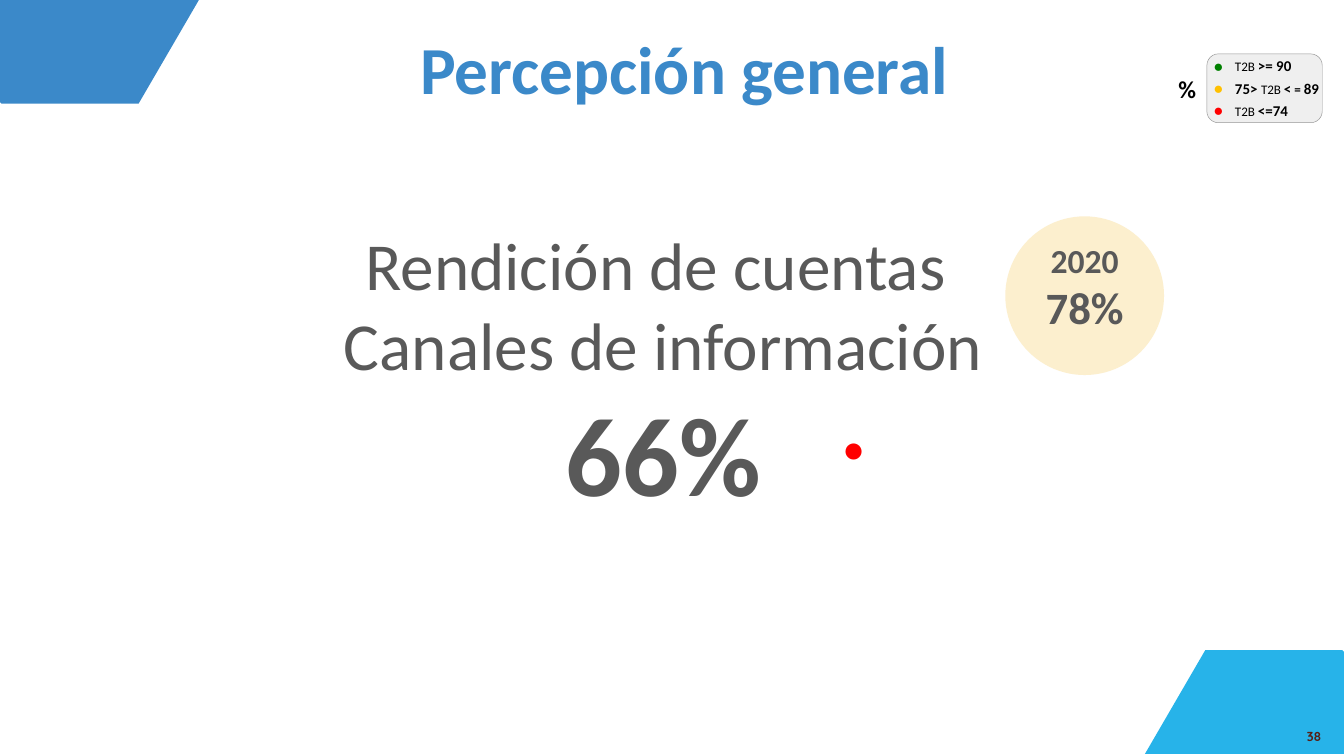
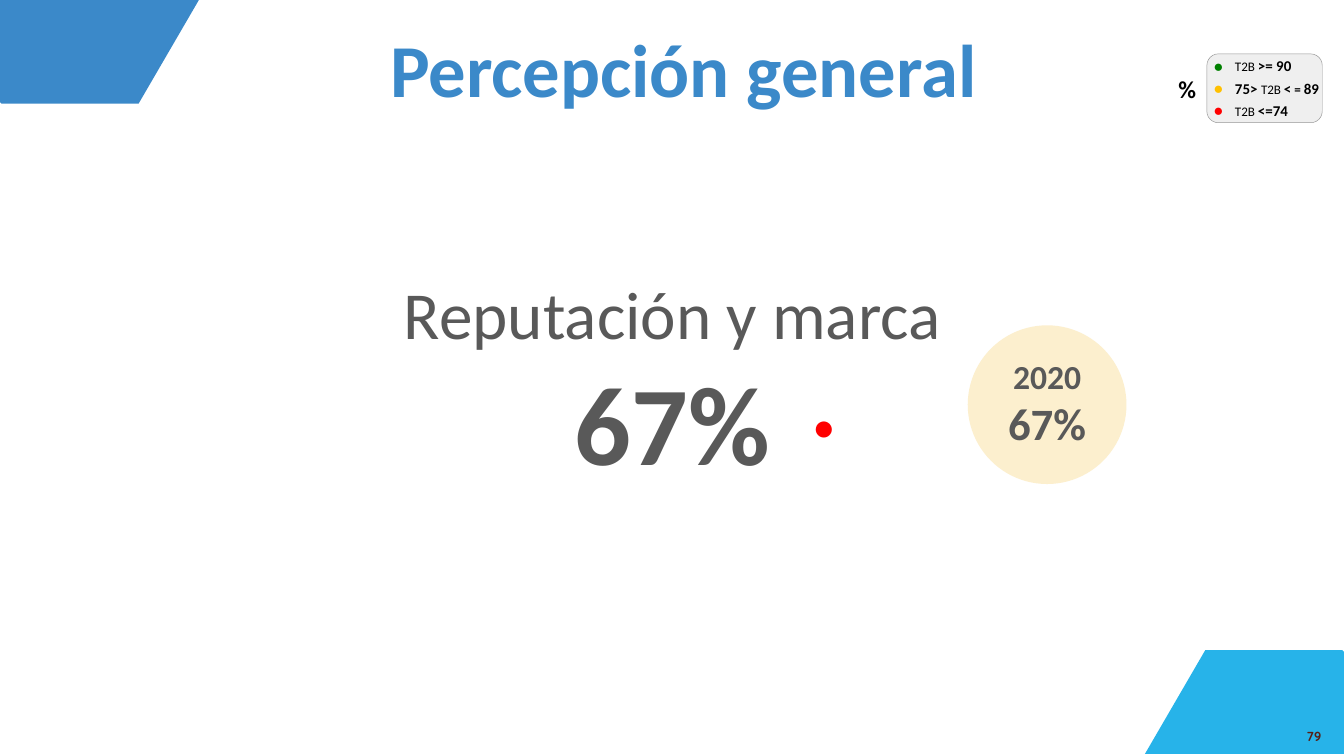
from pptx import Presentation
from pptx.dml.color import RGBColor
from pptx.enum.shapes import MSO_SHAPE
from pptx.enum.text import MSO_ANCHOR, PP_ALIGN
from pptx.util import Cm, Pt
from lxml import etree

BLUE = RGBColor(0x3B, 0x89, 0xC9)
SKY = RGBColor(0x27, 0xB3, 0xE9)
BROWN = RGBColor(0x55, 0x1F, 0x15)
GREY = RGBColor(0x59, 0x59, 0x59)
CREAM = RGBColor(0xFC, 0xEF, 0xCE)
PALE = RGBColor(0xEA, 0xEA, 0xEA)
EDGE = RGBColor(0x96, 0x96, 0x96)
BLACK = RGBColor(0, 0, 0)
GREEN = RGBColor(0, 0x80, 0)
AMBER = RGBColor(0xFF, 0xC0, 0)
RED = RGBColor(0xFF, 0, 0)

WIDE, HIGH, BASE = 25.4, 14.29, 14.25
CORNER = [(2.62, 1.96), (3.76, 0), (0, 0), (0, 1.93), (0.03, 1.96)]
TITLE = "Percepción general "
DOT = "●"
PLAIN = "{2D5ABB26-0587-4C30-8999-92F81FD0307C}"

# Each legend row: dot colour, then runs of (text, size, bold)
LEGEND = [
    (GREEN, [("T2B ", 7, False), (">= 90", 8, True)]),
    (AMBER, [("75> ", 8, True), ("T2B ", 7, False), ("<", 8, True),
             (" = ", 7, True), ("89", 8, True)]),
    (RED, [("T2B ", 7, False), ("<=74", 8, True)]),
]

SLIDES = [
    {"page": "38", "size": 36,
     "topic": ["Rendición de cuentas ", "Canales de información"],
     "score": "66%", "body": (6.25, 4.09, 12.57, 5.89), "dot": (15.67, 7.92),
     "past": "78%", "badge": (19, 4.09), "inset": 0},
    {"page": "79", "size": 40, "topic": ["Reputación y marca"],
     "score": "67%", "body": (6.22, 5.03, 12.98, 4.37), "dot": (15.11, 7.49),
     "past": "67%", "badge": (18.29, 6.15), "inset": 0.13},
]


def cms(*nums):
    return [Cm(n) for n in nums]


def write(frame, lines, align=None, space=None):
    """Fill a frame with lines; each line is a list of (text, size, bold, colour, font)."""
    for i, line in enumerate(lines):
        par = frame.add_paragraph() if i else frame.paragraphs[0]
        par.alignment = align
        par.line_spacing = space
        for text, size, bold, color, face in line:
            run = par.add_run()
            run.text = text
            run.font.size, run.font.bold = Pt(size), bold
            run.font.color.rgb, run.font.name = color, face


def label(slide, box, lines, align=None, anchor=MSO_ANCHOR.TOP):
    frame = slide.shapes.add_textbox(*cms(*box)).text_frame
    frame.word_wrap = True
    frame.vertical_anchor = anchor
    write(frame, lines, align)


def wedge(slide, points, color):
    first, *rest = [cms(*p) for p in points]
    pen = slide.shapes.build_freeform(*first)
    pen.add_line_segments(rest, close=True)
    shape = pen.convert_to_shape()
    shape.shadow.inherit = False
    shape.fill.solid()
    shape.fill.fore_color.rgb = color
    shape.line.fill.background()


def grid(slide, left, top, cols, rows):
    """Add a table with no style and return it."""
    table = slide.shapes.add_table(
        len(rows), len(cols), *cms(left, top, sum(cols), sum(rows))).table
    table.first_row = table.horz_banding = False
    table._tbl.tblPr[0].text = PLAIN
    for col, size in zip(table.columns, cols):
        col.width = Cm(size)
    for row, size in zip(table.rows, rows):
        row.height = Cm(size)
    return table


def fill(cell, line, side, end, align=None, space=None):
    cell.fill.background()
    cell.vertical_anchor = MSO_ANCHOR.MIDDLE
    cell.margin_left = cell.margin_right = Cm(side)
    cell.margin_top = cell.margin_bottom = Cm(end)
    write(cell.text_frame, [line], align, space)


def legend(slide):
    card = slide.shapes.add_shape(
        MSO_SHAPE.ROUNDED_RECTANGLE, *cms(22.81, 1.02, 2.18, 1.3))
    card.shadow.inherit = False
    card.fill.solid()
    card.fill.fore_color.rgb = PALE
    tint = card.fill._xPr.solidFill[0]
    etree.SubElement(tint, tint.tag.replace("srgbClr", "alpha"), val="73000")
    card.line.color.rgb = EDGE
    card.line.width = Pt(0.25)

    table = grid(slide, 22.81, 1.02, [0.43, 1.83], [0.48, 0.41, 0.41])
    for i, (color, runs) in enumerate(LEGEND):
        fill(table.cell(i, 0), [(DOT, 9, True, color, "Arial")], 0.1, 0.05,
             PP_ALIGN.CENTER, 0.8 if i else None)
        fill(table.cell(i, 1), [(*run, BLACK, "Calibri") for run in runs],
             0.1, 0.05, space=0.8)
    unit = grid(slide, 22.02, 1.42, [0.84], [0.56])
    fill(unit.cell(0, 0), [("%", 13, True, BLACK, "Calibri")], 0.25, 0)


def badge(slide, spot, past, inset):
    disc = slide.shapes.add_shape(MSO_SHAPE.OVAL, *cms(*spot, 3, 3))
    disc.shadow.inherit = False
    disc.fill.solid()
    disc.fill.fore_color.rgb = CREAM
    disc.line.fill.background()
    frame = disc.text_frame
    frame.vertical_anchor = MSO_ANCHOR.TOP
    frame.margin_top = frame.margin_bottom = Cm(inset)
    frame.margin_left = frame.margin_right = Cm(0)
    write(frame, [[("2020", 18, True, GREY, "Calibri")],
                  [(past, 24, True, GREY, "Calibri")]], PP_ALIGN.CENTER)


def build(slide, data):
    wedge(slide, [(WIDE - x, BASE - y) for x, y in CORNER], SKY)
    wedge(slide, CORNER, BLUE)
    label(slide, (22.81, 13.64, 2.41, 0.51),
          [[(data["page"], 7, True, BROWN, "Quicksand")]], PP_ALIGN.RIGHT)
    label(slide, (4.11, 0.74, 17.93, 1.07),
          [[(TITLE, data["size"], True, BLUE, "Calibri")]],
          PP_ALIGN.CENTER, MSO_ANCHOR.MIDDLE)
    lines = [[(text, 36, False, GREY, "Calibri")] for text in data["topic"]]
    lines.append([(data["score"], 60, True, GREY, "Calibri")])
    label(slide, data["body"], lines, PP_ALIGN.CENTER)
    legend(slide)
    label(slide, (*data["dot"], 1.07, 1.12), [[(DOT, 20, True, RED, "Arial")]])
    badge(slide, data["badge"], data["past"], data["inset"])


def main():
    deck = Presentation()
    deck.slide_width, deck.slide_height = cms(WIDE, HIGH)
    for data in SLIDES:
        build(deck.slides.add_slide(deck.slide_layouts[6]), data)
    deck.save("out.pptx")


if __name__ == "__main__":
    main()
